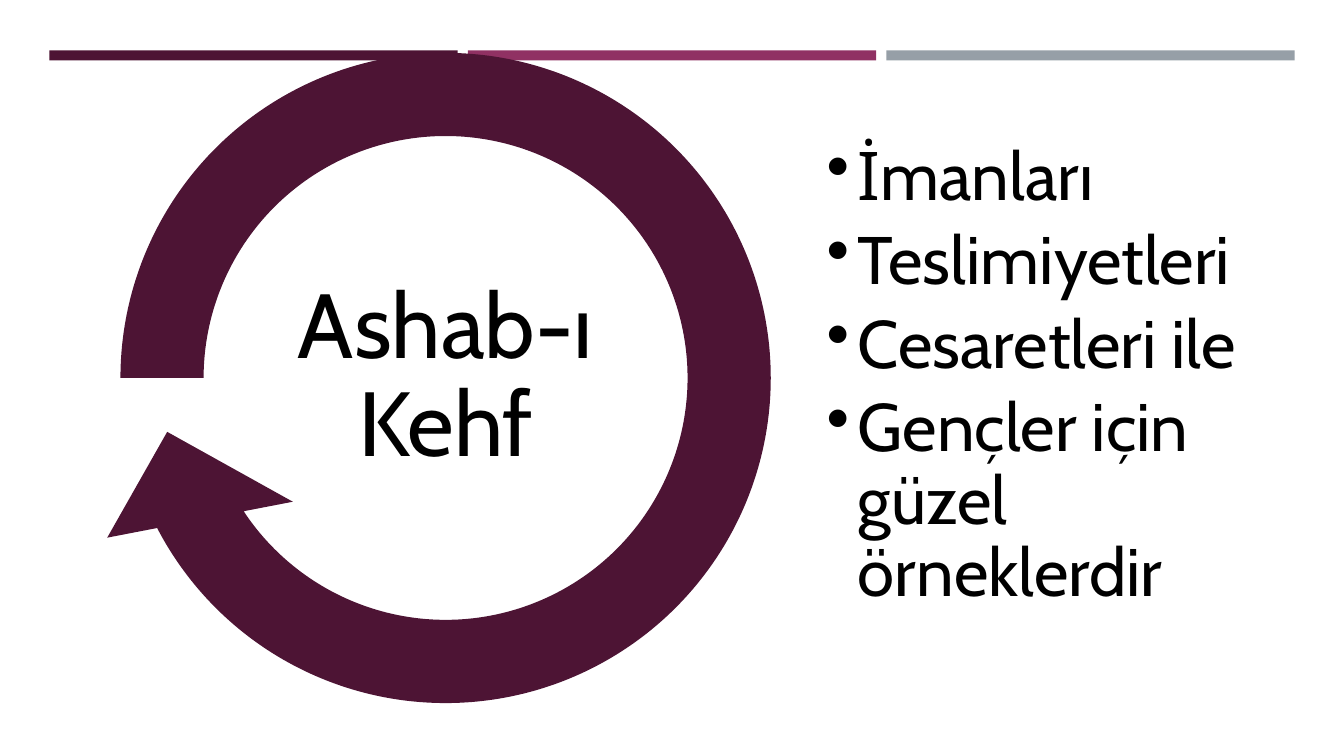
from lxml.etree import SubElement
from pptx import Presentation
from pptx.dml.color import RGBColor
from pptx.enum.shapes import MSO_SHAPE
from pptx.enum.text import MSO_ANCHOR, PP_ALIGN
from pptx.oxml.ns import qn
from pptx.util import Inches, Pt

PLUM = "4D1434"
VIRTUES = ["İmanları", "Teslimiyetleri", "Cesaretleri ile", "Gençler için güzel örneklerdir"]


def rgb(color):
    return RGBColor.from_string(color)


def add_filled(s, kind, x, y, w, h, color):
    sp = s.shapes.add_shape(kind, Inches(x), Inches(y), Inches(w), Inches(h))
    sp.shadow.inherit = False
    sp.fill.solid()
    sp.fill.fore_color.rgb = rgb(color)
    sp.line.fill.background()
    return sp


def add_bullet(p, indent):
    pPr = p._p.get_or_add_pPr()
    pPr.set("marL", str(Inches(indent)))
    pPr.set("indent", str(Inches(-indent)))
    SubElement(pPr, qn("a:buChar"), char="•")


def add_text(s, lines, x, y, w, h, size, inset, align=PP_ALIGN.LEFT, after=0, indent=0):
    tf = s.shapes.add_textbox(Inches(x), Inches(y), Inches(w), Inches(h)).text_frame
    tf.word_wrap = True
    tf.vertical_anchor = MSO_ANCHOR.MIDDLE
    tf.margin_left = tf.margin_right = tf.margin_top = tf.margin_bottom = Inches(inset)
    for i, line in enumerate(lines):
        p = tf.add_paragraph() if i else tf.paragraphs[0]
        p.alignment = align
        p.line_spacing = 0.9
        p.space_after = Pt(after)
        if indent:
            add_bullet(p, indent)
        r = p.add_run()
        r.text = line
        r.font.size = Pt(size)
        r.font.name = "Cabin"
        r.font.color.rgb = rgb("000000")


def add_top_bars(s, x, y, w, h, gap=0.1):
    colors = [PLUM, "903163", "969FA7"]
    bar_w = (w - gap * (len(colors) - 1)) / len(colors)
    for i, color in enumerate(colors):
        add_filled(s, MSO_SHAPE.RECTANGLE, x + i * (bar_w + gap), y, bar_w, h, color)


def add_cycle(s, x, y, size):
    arrow = add_filled(s, MSO_SHAPE.CIRCULAR_ARROW, x, y, size, size, PLUM)
    for i, value in enumerate([0.11, 11.423, 90, 108, 0.125]):
        arrow.adjustments[i] = value
    w, h = 4.18, 2.09
    add_text(s, ["Ashab-ı Kehf"], x + (size - w) / 2, y + (size - h) / 2, w, h,
             size=65, inset=0.05, align=PP_ALIGN.CENTER)


def add_virtues(s, x, y, w, h):
    add_text(s, VIRTUES, x, y, w, h, size=48, inset=0.03, after=8, indent=0.31)


def main():
    prs = Presentation()
    prs.slide_width, prs.slide_height = Inches(13.33), Inches(7.5)
    s = prs.slides.add_slide(prs.slide_layouts[6])
    add_top_bars(s, 0.49, 0.5, 12.35, 0.1)
    add_cycle(s, 0.67, 0, 7.5)
    add_virtues(s, 8.17, 2.24, 4.5, 3)
    prs.save("out.pptx")


if __name__ == "__main__":
    main()
